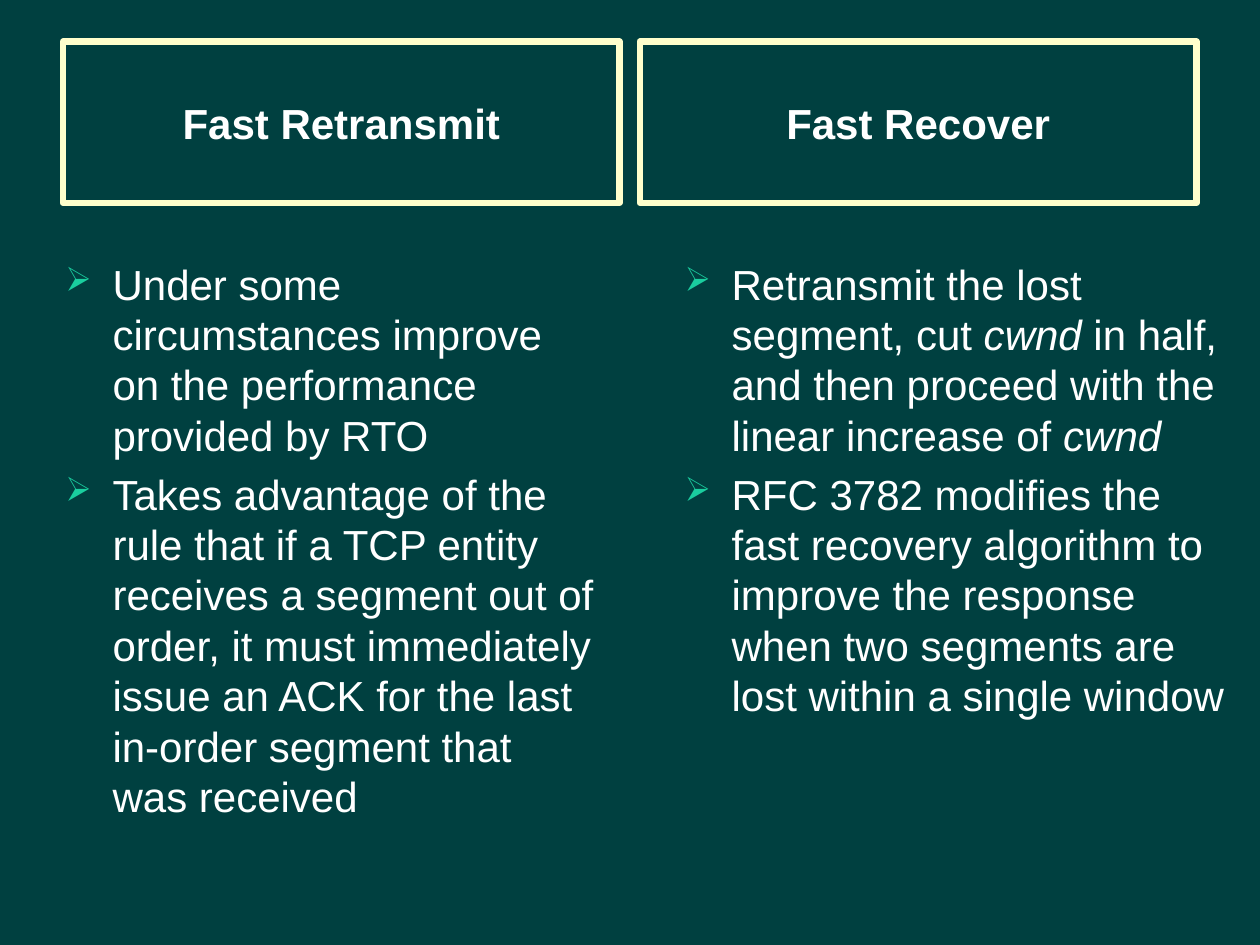
from lxml.etree import SubElement
from pptx import Presentation
from pptx.dml.color import RGBColor
from pptx.enum.shapes import MSO_SHAPE
from pptx.enum.text import MSO_ANCHOR, PP_ALIGN
from pptx.oxml.ns import qn
from pptx.util import Cm, Pt

BACKGROUND = RGBColor(0x00, 0x40, 0x40)
BORDER = RGBColor(0xFF, 0xFF, 0xCC)
BULLET = RGBColor(0x1A, 0xCE, 0x9F)
TEXT = RGBColor(0xFF, 0xFF, 0xFF)

RETRANSMIT_POINTS = [
    [("Under some circumstances improve on the performance provided by RTO", False)],
    [("Takes advantage of the rule that if a TCP entity receives a segment out of "
      "order, it must immediately issue an ACK for the last in-order segment that "
      "was received", False)],
]
RECOVER_POINTS = [
    [("Retransmit the lost segment, cut ", False), ("cwnd ", True),
     ("in half, and then proceed with the linear increase of ", False), ("cwnd", True)],
    [("RFC 3782 modifies the fast recovery algorithm to improve the response when "
      "two segments are lost within a single window", False)],
]


class ComparisonSlide:
    """Draws the headings and bullet lists of a two-column slide in one style."""

    font_name = "Arial"
    font_size = Pt(24)
    line_spacing = Pt(28.8)
    space_before = Pt(4.8)
    indent = Cm(0.95)

    def __init__(self, presentation):
        self.slide = presentation.slides.add_slide(presentation.slide_layouts[6])
        self.slide.background.fill.solid()
        self.slide.background.fill.fore_color.rgb = BACKGROUND

    def add_run(self, paragraph, text, bold=False, italic=False):
        run = paragraph.add_run()
        run.text = text
        run.font.name = self.font_name
        run.font.size = self.font_size
        run.font.color.rgb = TEXT
        run.font.bold = bold
        run.font.italic = italic

    def add_heading(self, left, text):
        shape = self.slide.shapes.add_shape(
            MSO_SHAPE.RECTANGLE, left, Cm(0.84), Cm(11.22), Cm(3.25))
        shape.shadow.inherit = False
        shape.fill.background()
        shape.line.color.rgb = BORDER
        shape.line.width = Pt(3.75)
        shape.text_frame.word_wrap = True
        shape.text_frame.vertical_anchor = MSO_ANCHOR.MIDDLE
        paragraph = shape.text_frame.paragraphs[0]
        paragraph.alignment = PP_ALIGN.CENTER
        paragraph.space_before = self.space_before
        self.add_run(paragraph, text, bold=True)

    def add_bullet(self, paragraph):
        properties = paragraph._p.get_or_add_pPr()
        properties.set("marL", str(self.indent))
        properties.set("indent", str(-self.indent))
        color = SubElement(properties, qn("a:buClr"))
        SubElement(color, qn("a:srgbClr"), val=str(BULLET))
        SubElement(properties, qn("a:buSzPct"), val="80000")
        SubElement(properties, qn("a:buChar"), char="➢")

    def add_bullet_list(self, left, width, points):
        shape = self.slide.shapes.add_textbox(left, Cm(5.08), width, Cm(11.94))
        text_frame = shape.text_frame
        text_frame.word_wrap = True
        for index, runs in enumerate(points):
            paragraph = text_frame.add_paragraph() if index else text_frame.paragraphs[0]
            paragraph.line_spacing = self.line_spacing
            paragraph.space_before = self.space_before
            self.add_bullet(paragraph)
            for text, italic in runs:
                self.add_run(paragraph, text, italic=italic)


def main():
    presentation = Presentation()
    presentation.slide_width = Cm(25.4)
    presentation.slide_height = Cm(19.05)
    comparison = ComparisonSlide(presentation)
    comparison.add_heading(Cm(1.27), "Fast Retransmit")
    comparison.add_bullet_list(Cm(1.07), Cm(11.22), RETRANSMIT_POINTS)
    comparison.add_heading(Cm(12.9), "Fast Recover")
    comparison.add_bullet_list(Cm(13.55), Cm(11.43), RECOVER_POINTS)
    presentation.save("out.pptx")


if __name__ == "__main__":
    main()
